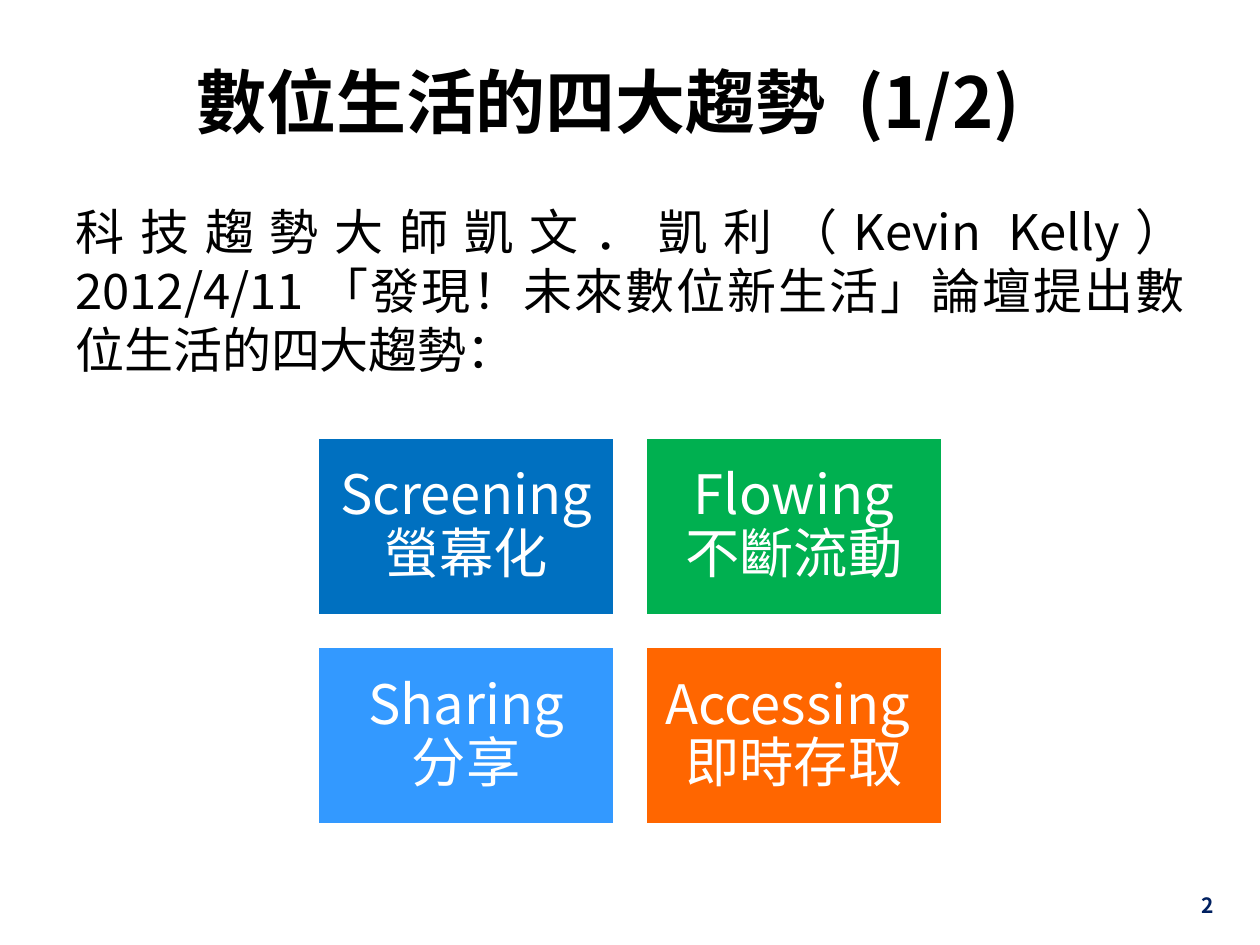
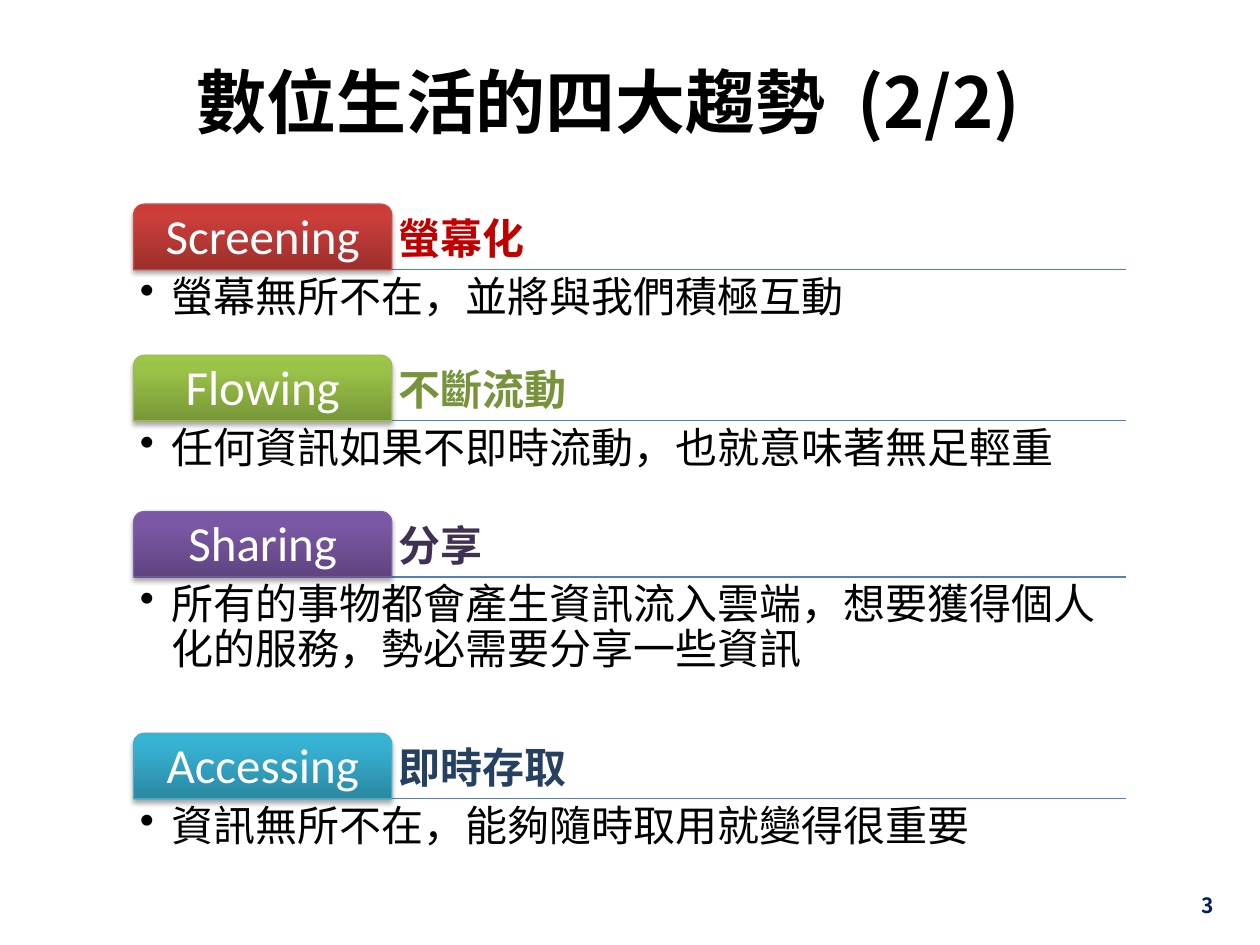
"""Build two slides on the four trends of digital life."""
from dataclasses import dataclass

from lxml import etree
from pptx import Presentation
from pptx.dml.color import RGBColor
from pptx.enum.shapes import MSO_CONNECTOR, MSO_SHAPE
from pptx.enum.text import MSO_ANCHOR, PP_ALIGN
from pptx.oxml.ns import qn
from pptx.util import Inches, Pt

LEFT, CENTER, RIGHT, JUSTIFY = PP_ALIGN.LEFT, PP_ALIGN.CENTER, PP_ALIGN.RIGHT, PP_ALIGN.JUSTIFY
TOP, MIDDLE, BOTTOM = MSO_ANCHOR.TOP, MSO_ANCHOR.MIDDLE, MSO_ANCHOR.BOTTOM
RECT, TAB = MSO_SHAPE.RECTANGLE, MSO_SHAPE.ROUND_2_SAME_RECTANGLE
STRAIGHT = MSO_CONNECTOR.STRAIGHT


@dataclass(frozen=True)
class TextStyle:
    """Font, alignment and box settings of one kind of text."""
    size: float
    color: str
    font: str = "Noto Sans CJK SC"
    bold: bool = False
    align: PP_ALIGN = LEFT
    anchor: MSO_ANCHOR = TOP
    inset: tuple[float, float] = (0.1, 0.05)
    spacing: float = 1.0


@dataclass(frozen=True)
class Theme:
    """Colours and text styles shared by the slides."""
    white: str = "FFFFFF"
    black: str = "000000"
    rule: str = "4F81BD"
    title: TextStyle = TextStyle(40, "000000", bold=True, anchor=MIDDLE)
    page: TextStyle = TextStyle(12, "002060", bold=True, align=RIGHT, anchor=MIDDLE)
    intro: TextStyle = TextStyle(28, "000000", align=JUSTIFY)
    tile: TextStyle = TextStyle(31, "FFFFFF", "Noto Sans CJK KR", align=CENTER,
                                anchor=MIDDLE, inset=(0.13, 0.13), spacing=0.9)
    tab: TextStyle = TextStyle(28, "FFFFFF", "Calibri", align=CENTER,
                               anchor=MIDDLE, inset=(0.06, 0.06), spacing=0.9)
    detail: TextStyle = TextStyle(24, "000000", inset=(0.05, 0.05), spacing=0.9)


THEME = Theme()


@dataclass(frozen=True)
class Box:
    """Position and size in inches."""
    left: float
    top: float
    width: float
    height: float

    def emu(self) -> list[int]:
        """Return the four lengths for python-pptx."""
        return [Inches(v) for v in (self.left, self.top, self.width, self.height)]


@dataclass(frozen=True)
class Tile:
    """One coloured tile of the overview grid."""
    text: str
    fill: str


@dataclass(frozen=True)
class Trend:
    """One trend with its heading, detail and tab colours."""
    name: str
    heading: str
    detail: str
    top: float
    detail_height: float
    heading_color: str
    line: str
    gradient: tuple[str, str, str]


TITLE = "數位生活的四大趨勢"
INTRO = "科技趨勢大師凱文．凱利（Kevin Kelly）2012/4/11 「發現！未來數位新生活」論壇提出數位生活的四大趨勢："
TILES = (
    Tile("Screening\v螢幕化", "0070C0"),
    Tile("Flowing\v不斷流動", "00B050"),
    Tile("Sharing\v分享", "3399FF"),
    Tile("Accessing \v即時存取", "FF6600"),
)
TRENDS = (
    Trend("Screening", "螢幕化", "螢幕無所不在，並將與我們積極互動",
          1.62, 0.65, "C00000", "C0504D", ("9C2F2D", "CB3E3A", "CE3B37")),
    Trend("Flowing", "不斷流動", "任何資訊如果不即時流動，也就意味著無足輕重",
          2.82, 0.7, "77933C", "9BBB59", ("779737", "9BC348", "9DC746")),
    Trend("Sharing", "分享", "所有的事物都會產生資訊流入雲端，想要獲得個人化的服務，勢必需要分享一些資訊",
          4.06, 1.21, "403152", "8064A2", ("5F4480", "7B58A6", "7C57A8")),
    Trend("Accessing", "即時存取", "資訊無所不在，能夠隨時取用就變得很重要",
          5.82, 0.75, "254061", "4BACC6", ("2A88A2", "37B1D2", "34B4D6")),
)
TREND_LEFT, TREND_WIDTH = 1.06, 7.88
TAB_WIDTH, TAB_HEIGHT = 2.05, 0.52


def set_all(target, values: dict) -> None:
    """Set every attribute named in values."""
    for name, value in values.items():
        setattr(target, name, value)


def add_xml(parent, tag: str, **attributes: str):
    """Append one drawing element and return it."""
    return etree.SubElement(parent, qn(tag), attributes)


def style_run(r, style: TextStyle) -> None:
    """Apply the font of a style to a run."""
    set_all(r.font, {"size": Pt(style.size), "bold": style.bold, "name": style.font})
    r.font.color.rgb = RGBColor.from_string(style.color)
    add_xml(r._r.get_or_add_rPr(), "a:ea", typeface=style.font)


def write(shape, text: str, style: TextStyle, bullet: bool = False):
    """Write one styled paragraph into a shape and return it."""
    tf = shape.text_frame
    across, down = (Inches(v) for v in style.inset)
    set_all(tf, {"word_wrap": True, "vertical_anchor": style.anchor,
                 "margin_left": across, "margin_right": across,
                 "margin_top": down, "margin_bottom": down})
    p = tf.paragraphs[0]
    p.text = text
    if bullet:
        pPr = p._p.get_or_add_pPr()
        pPr.set("marL", str(Inches(0.25)))
        pPr.set("indent", str(-Inches(0.25)))
        add_xml(pPr, "a:buChar", char="•")
    set_all(p, {"alignment": style.align, "line_spacing": style.spacing})
    for r in p.runs:
        style_run(r, style)
    return p


def add_text(s, box: Box, text: str, style: TextStyle, bullet: bool = False):
    """Add a text box and return its paragraph."""
    return write(s.shapes.add_textbox(*box.emu()), text, style, bullet)


def add_block(s, kind: MSO_SHAPE, box: Box, fill: str, line: str, width: float):
    """Add a filled shape with an outline and no shadow."""
    sp = s.shapes.add_shape(kind, *box.emu())
    sp.shadow.inherit = False
    sp.fill.solid()
    sp.fill.fore_color.rgb = RGBColor.from_string(fill)
    sp.line.color.rgb = RGBColor.from_string(line)
    sp.line.width = Pt(width)
    return sp


def add_rule(s, y: float) -> None:
    """Draw the thin line under a trend heading."""
    line = s.shapes.add_connector(STRAIGHT, Inches(TREND_LEFT), Inches(y),
                                  Inches(TREND_LEFT + TREND_WIDTH), Inches(y))
    line.line.color.rgb = RGBColor.from_string(THEME.rule)
    line.line.width = Pt(0.75)
    add_xml(line._element.spPr, "a:effectLst")


def add_tab(s, trend: Trend) -> None:
    """Add the shaded name tab of a trend."""
    box = Box(TREND_LEFT, trend.top, TAB_WIDTH, TAB_HEIGHT)
    sp = add_block(s, TAB, box, trend.gradient[0], trend.line, 0.75)
    sp.fill.gradient()
    sp.fill.gradient_angle = 90
    spPr = sp._element.spPr
    stops = spPr.find(qn("a:gradFill")).find(qn("a:gsLst"))
    for stop in list(stops):
        stops.remove(stop)
    for position, color in zip((0, 80, 100), trend.gradient):
        stop = add_xml(stops, "a:gs", pos=str(position * 1000))
        add_xml(stop, "a:srgbClr", val=color)
    shadow = add_xml(spPr.find(qn("a:effectLst")), "a:outerShdw", blurRad=str(Pt(3.1)),
                     dist=str(Pt(1.8)), dir="5400000", rotWithShape="0")
    add_xml(add_xml(shadow, "a:srgbClr", val=THEME.black), "a:alpha", val="35000")
    write(sp, trend.name, THEME.tab)


def add_page(prs, number: int, part: str):
    """Add a blank slide with the shared title and page number."""
    s = prs.slides.add_slide(prs.slide_layouts[6])
    p = add_text(s, Box(1.46, 0.21, 7.96, 1.18), TITLE, THEME.title)
    for text in (" ", part):
        r = p.add_run()
        r.text = text
        style_run(r, THEME.title)
    p.runs[1].font._element.set("spc", "900")
    add_text(s, Box(7.38, 6.98, 2.35, 0.4), str(number), THEME.page)
    return s


def build_overview(prs) -> None:
    """Build the introduction with its grid of four tiles."""
    s = add_page(prs, 2, "(1/2)")
    add_text(s, Box(0.5, 1.55, 9, 5.15), INTRO, THEME.intro)
    width, height, gap = 2.36, 1.42, 0.24
    for i, tile in enumerate(TILES):
        row, col = divmod(i, 2)
        box = Box(2.52 + col * (width + gap), 3.47 + row * (height + gap), width, height)
        sp = add_block(s, RECT, box, tile.fill, THEME.white, 2)
        write(sp, tile.text, THEME.tile)


def build_details(prs) -> None:
    """Build the list that explains each trend."""
    s = add_page(prs, 3, "(2/2)")
    for trend in TRENDS:
        bottom = trend.top + TAB_HEIGHT
        add_rule(s, bottom)
        heading = TextStyle(24, trend.heading_color, bold=True, anchor=BOTTOM,
                            inset=(0.05, 0.05), spacing=0.9)
        add_text(s, Box(TREND_LEFT + TAB_WIDTH, trend.top, TREND_WIDTH - TAB_WIDTH, TAB_HEIGHT),
                 trend.heading, heading)
        add_tab(s, trend)
        add_text(s, Box(TREND_LEFT, bottom, TREND_WIDTH, trend.detail_height),
                 trend.detail, THEME.detail, bullet=True)


def main() -> None:
    """Create and save the presentation."""
    prs = Presentation()
    set_all(prs, {"slide_width": Inches(10), "slide_height": Inches(7.5)})
    build_overview(prs)
    build_details(prs)
    prs.save("out.pptx")


if __name__ == "__main__":
    main()
